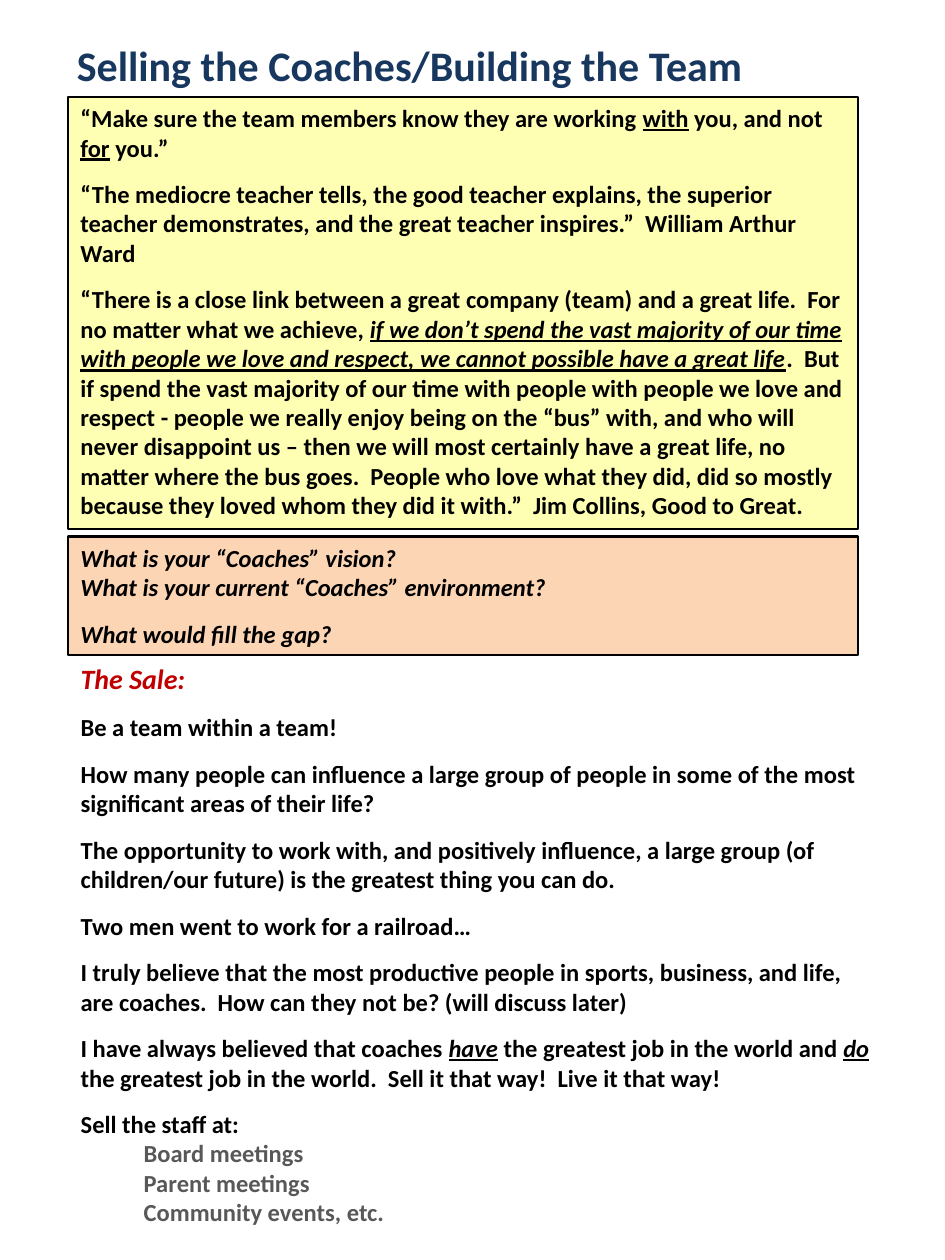
from lxml import etree
from pptx import Presentation
from pptx.dml.color import RGBColor
from pptx.enum import shapes, text
from pptx.oxml.ns import qn
from pptx.util import Pt

# Content: a paragraph is a list of (text, style) runs; style letters are i and u
TITLE = "Selling the Coaches/Building the Team"

QUOTES = [
    [("“Make sure the team members know they are working ", ""), ("with", "u"),
     (" you, and not ", ""), ("for", "u"), (" you.”", "")],
    [("“The mediocre teacher tells, the good teacher explains, the superior teacher "
      "demonstrates, and the great teacher inspires.”  William Arthur Ward", "")],
    [("“There is a close link between a great company (team) and a great life.  "
      "For no matter what we achieve, ", ""),
     ("if we don’t spend the vast majority of our time with people we love and respect, "
      "we cannot possible have a great life", "iu"),
     (".  But if spend the vast majority of our time with people with people we love and "
      "respect - people we really enjoy being on the “bus” with, and who will never "
      "disappoint us – then we will most certainly have a great life, no matter where the "
      "bus goes.  People who love what they did, did so mostly because they loved whom "
      "they did it with.”  Jim Collins, Good to Great.", "")],
]

QUESTIONS = [
    [("What is your “Coaches” vision?", "i")],
    [("What is your current “Coaches” environment?", "i")],
    [("What would fill the gap?", "i")],
]

SALE_HEADING = "The Sale:"
SALE = [
    [("Be a team within a team!", "")],
    [("How many people can influence a large group of people in some of the most "
      "significant areas of their life?", "")],
    [("The opportunity to work with, and positively influence, a large group (of "
      "children/our future) is the greatest thing you can do.", "")],
    [("Two men went to work for a railroad…", "")],
    [("I truly believe that the most productive people in sports, business, and life, "
      "are coaches.  How can they not be? (will discuss later)", "")],
    [("I have always believed that coaches ", ""), ("have", "iu"),
     (" the greatest job in the world and ", ""), ("do", "iu"),
     (" the greatest job in the world.  Sell it that way!  Live it that way!", "")],
    [("Sell the staff at:", "")],
]
VENUES = ["Board meetings", "Parent meetings", "Community events, etc."]

# Layout, in points
LEFT, BOX_WIDTH = 38.9, 451.4
GAP = 9.77
BOXES = [  # top, height, fill, paragraphs, space before each
    (55.4, 247, "FFFFB3", QUOTES, (0, GAP, GAP)),
    (306.7, 67.7, "FCD5B5", QUESTIONS, (0, 0, GAP)),
]


def rgb(color):
    return RGBColor.from_string(color)


def write(tf, runs, size=14, color="000000", before=0, level=0, indent=0):
    """Fill the empty first paragraph, or add a new one."""
    p = tf.paragraphs[0]
    if p.runs:
        p = tf.add_paragraph()
    p.level = level
    p.alignment = text.PP_ALIGN.LEFT
    p.space_before, p.space_after = Pt(before), Pt(0)
    pPr = p._p.get_or_add_pPr()
    pPr.set("marL", str(Pt(indent)))
    pPr.set("indent", "0")
    etree.SubElement(pPr, qn("a:buNone"))
    for words, style in runs:
        r = p.add_run()
        r.text = words
        r.font.name, r.font.size, r.font.bold = "Calibri", Pt(size), True
        r.font.italic, r.font.underline = "i" in style, "u" in style
        r.font.color.rgb = rgb(color)


def place(sp, left, top, width, height, anchor=text.MSO_ANCHOR.TOP):
    sp.left, sp.top, sp.width, sp.height = map(Pt, (left, top, width, height))
    tf = sp.text_frame
    tf.word_wrap = True
    tf.auto_size = text.MSO_AUTO_SIZE.NONE
    tf.vertical_anchor = anchor
    return tf


prs = Presentation()
prs.slide_width, prs.slide_height = Pt(540), Pt(720)
s = prs.slides.add_slide(prs.slide_layouts[1])

# Title
tf = place(s.shapes.title, 36.7, 18.7, 395.3, 36, text.MSO_ANCHOR.MIDDLE)
tf.word_wrap = False
write(tf, [(TITLE, "")], size=24, color="17375E")

# Quote and question boxes
for top, height, fill, paragraphs, gaps in BOXES:
    sp = s.shapes.add_shape(shapes.MSO_SHAPE.RECTANGLE, 0, 0, 0, 0)
    sp.shadow.inherit = False
    sp.fill.solid()
    sp.fill.fore_color.rgb = rgb(fill)
    sp.line.color.rgb = rgb("000000")
    sp.line.width = Pt(1.5)
    tf = place(sp, LEFT, top, BOX_WIDTH, height)
    for runs, before in zip(paragraphs, gaps):
        write(tf, runs, before=before)

# The sale, with its indented venues
tf = place(s.placeholders[1], LEFT, 374.4, 465.2, 332)
write(tf, [(SALE_HEADING, "i")], size=16, color="C00000")
for runs in SALE:
    write(tf, runs, before=GAP)
for venue in VENUES:
    write(tf, [(venue, "")], color="585858", level=1, indent=36)

prs.save("out.pptx")
